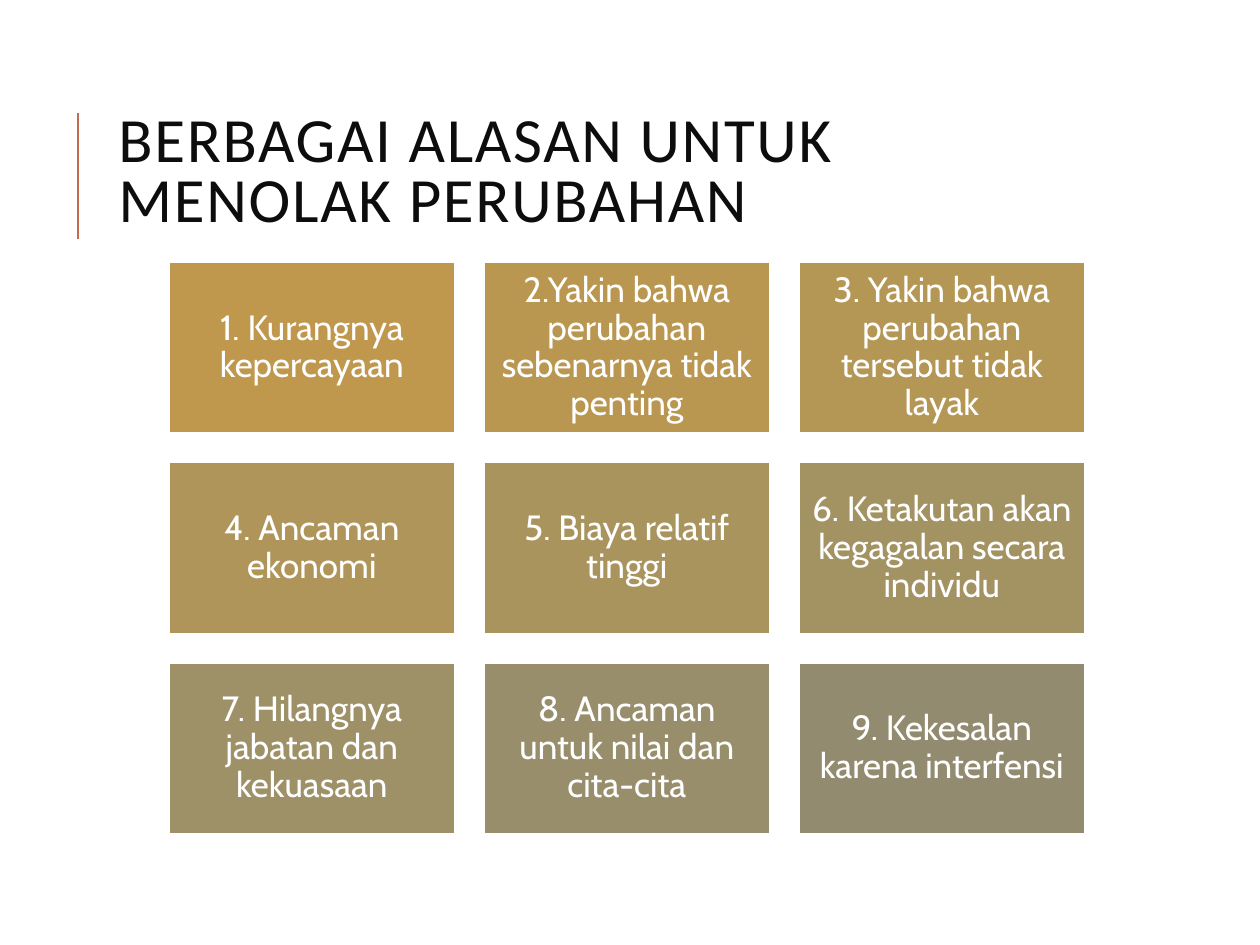
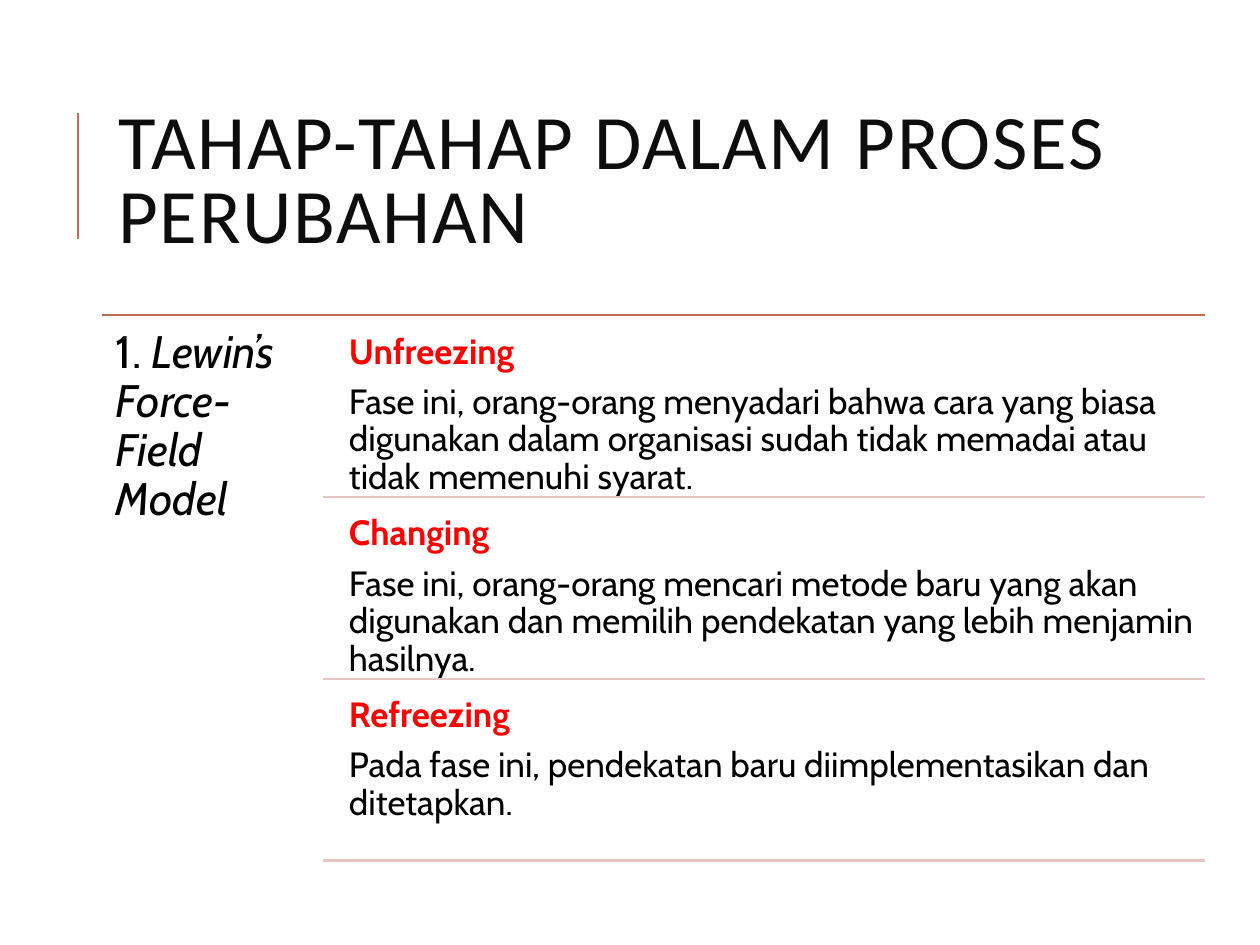
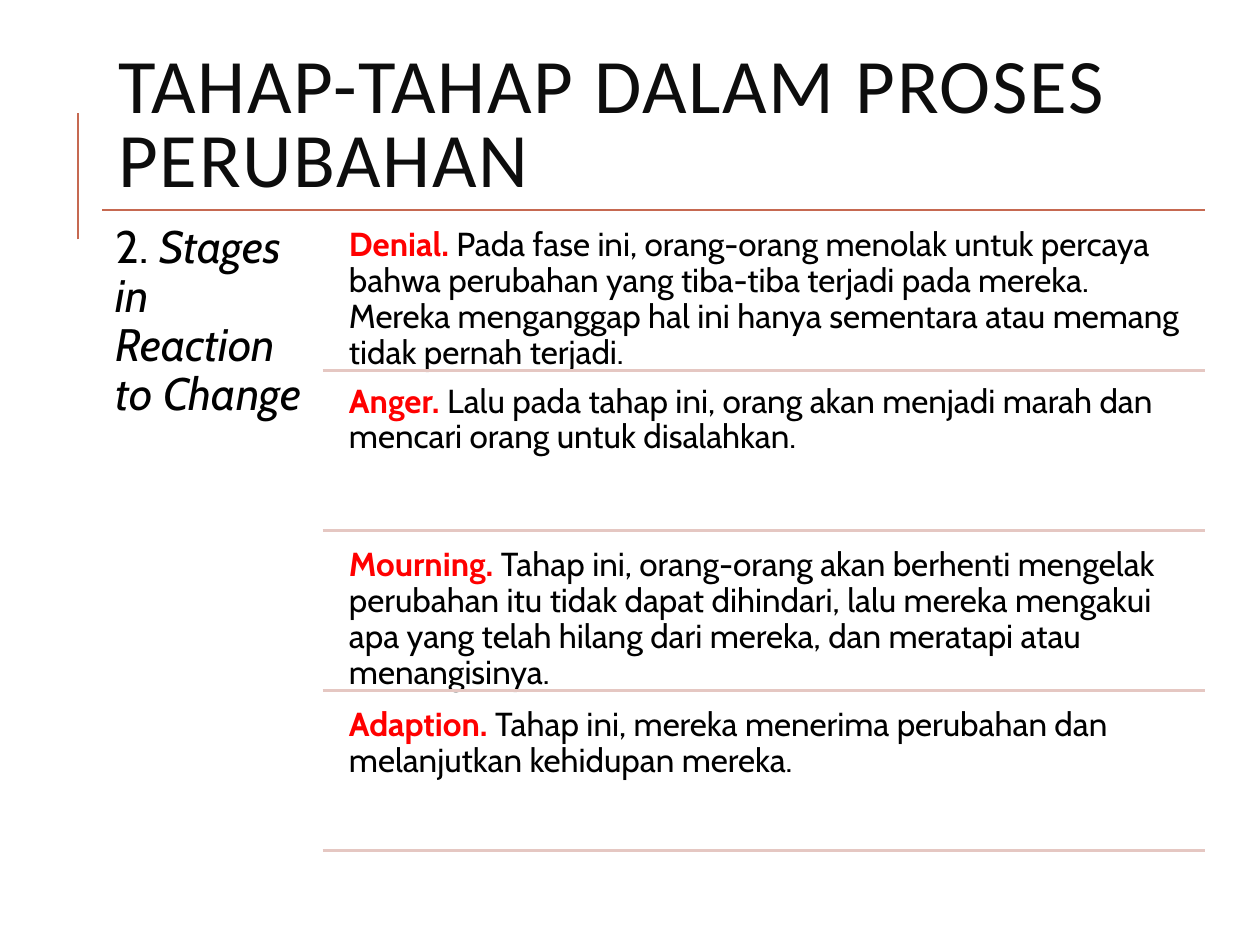
"""Build three slides on resistance to change and the stages of change."""
from lxml import etree
from pptx import Presentation
from pptx.dml.color import RGBColor
from pptx.enum.shapes import MSO_CONNECTOR, MSO_SHAPE
from pptx.enum.text import MSO_ANCHOR, MSO_AUTO_SIZE, PP_ALIGN
from pptx.oxml.ns import qn
from pptx.util import Inches, Pt

STRAIGHT, RECT = MSO_CONNECTOR.STRAIGHT, MSO_SHAPE.RECTANGLE
TOP, MIDDLE = MSO_ANCHOR.TOP, MSO_ANCHOR.MIDDLE
LEFT, CENTER = PP_ALIGN.LEFT, PP_ALIGN.CENTER
NO_FIT = MSO_AUTO_SIZE.NONE

COLORS = {
    "accent": "C66951", "rule": "E5C7C2", "title": "0D0D0D",
    "text": "000000", "key": "FF0000", "white": "FFFFFF",
    "tile1": "BF974D", "tile2": "BA9751", "tile3": "B49655",
    "tile4": "AF955A", "tile5": "A9945E", "tile6": "A39262",
    "tile7": "9E9067", "tile8": "988E6B", "tile9": "928B70",
}
TITLE_FONT, BODY_FONT = "Calibri", "Cabin"

REASONS = [
    "1. Kurangnya kepercayaan",
    "2.Yakin bahwa perubahan sebenarnya tidak penting",
    "3. Yakin bahwa perubahan tersebut tidak layak",
    "4. Ancaman ekonomi",
    "5. Biaya relatif tinggi",
    "6. Ketakutan akan kegagalan secara individu",
    "7. Hilangnya jabatan dan kekuasaan",
    "8. Ancaman untuk nilai dan cita-cita",
    "9. Kekesalan karena interfensi",
]
STAGES_TITLE = "TAHAP-TAHAP DALAM PROSES PERUBAHAN"
LEWIN_STAGES = [
    ("Unfreezing", "Fase ini, orang-orang menyadari bahwa cara yang biasa digunakan dalam "
     "organisasi sudah tidak memadai atau tidak memenuhi syarat."),
    ("Changing", "Fase ini, orang-orang mencari metode baru yang akan digunakan dan memilih "
     "pendekatan yang lebih menjamin hasilnya."),
    ("Refreezing", "Pada fase ini, pendekatan baru diimplementasikan dan ditetapkan."),
]
REACTION_STAGES = [
    ("Denial. ", "Pada fase ini, orang-orang menolak untuk percaya bahwa perubahan yang "
     "tiba-tiba terjadi pada mereka. Mereka menganggap hal ini hanya sementara atau "
     "memang tidak pernah terjadi."),
    ("Anger. ", "Lalu pada tahap ini, orang akan menjadi marah dan mencari orang untuk "
     "disalahkan."),
    ("Mourning. ", "Tahap ini, orang-orang akan berhenti mengelak perubahan itu tidak dapat "
     "dihindari, lalu mereka mengakui apa yang telah hilang dari mereka, dan meratapi atau "
     "menangisinya."),
    ("Adaption. ", "Tahap ini, mereka menerima perubahan dan melanjutkan kehidupan mereka."),
]


def color(name):
    """Return the named colour."""
    return RGBColor.from_string(COLORS[name])


def add_run(p, text, size=20, font=BODY_FONT, fill="text", bold=False, italic=False, spacing=0):
    """Add formatted text to a paragraph."""
    r = p.add_run()
    r.text = text
    r.font.name, r.font.size = font, Pt(size)
    r.font.bold, r.font.italic = bold, italic
    r.font.color.rgb = color(fill)
    if spacing:
        r.font._element.set("spc", str(spacing * 100))


class Deck:
    """Hold the shared style and the current slide."""

    def __init__(self):
        """Open an empty 10 by 7.5 inch presentation."""
        self.prs = Presentation()
        self.prs.slide_width, self.prs.slide_height = Inches(10), Inches(7.5)
        self.s = None

    def slide(self, title, box, size):
        """Start a slide with its title and the accent bar beside it."""
        self.s = self.prs.slides.add_slide(self.prs.slide_layouts[5])
        self.line(0.62, 1.9, 0.62, 0.9, "accent", 1.5)
        sp = self.s.shapes.title
        sp.left, sp.top, sp.width, sp.height = map(Inches, box)
        self.frame(sp.text_frame, MIDDLE)
        p = sp.text_frame.paragraphs[0]
        p.alignment, p.line_spacing = LEFT, 0.8
        add_run(p, title, size=size, font=TITLE_FONT, fill="title", spacing=1)

    def frame(self, tf, anchor, inset=None):
        """Set wrapping, anchor and equal insets of a text frame."""
        tf.word_wrap, tf.auto_size, tf.vertical_anchor = True, NO_FIT, anchor
        if inset is not None:
            tf.margin_left = tf.margin_top = tf.margin_right = tf.margin_bottom = Inches(inset)

    def line(self, x1, y1, x2, y2, fill, width=1.25):
        """Draw a straight line without shadow."""
        c = self.s.shapes.add_connector(STRAIGHT, *map(Inches, (x1, y1, x2, y2)))
        c.line.color.rgb, c.line.width = color(fill), Pt(width)
        etree.SubElement(c._element.spPr, qn("a:effectLst"))

    def paragraphs(self, tf, paragraphs, size, align=LEFT):
        """Fill a text frame with paragraphs, each a list of (text, format) runs."""
        for i, runs in enumerate(paragraphs):
            p = tf.add_paragraph() if i else tf.paragraphs[0]
            p.alignment, p.line_spacing, p.space_after = align, 0.9, Pt(round(size * 0.35, 1))
            for text, style in runs:
                add_run(p, text, size=size, **style)

    def text(self, box, paragraphs, size, inset=0.08):
        """Add a top-anchored text box."""
        tf = self.s.shapes.add_textbox(*map(Inches, box)).text_frame
        self.frame(tf, TOP, inset)
        self.paragraphs(tf, paragraphs, size)

    def tile(self, box, text, fill):
        """Add a filled rectangle with centred white text."""
        sp = self.s.shapes.add_shape(RECT, *map(Inches, box))
        sp.shadow.inherit = False
        sp.fill.solid()
        sp.fill.fore_color.rgb = color(fill)
        sp.line.color.rgb, sp.line.width = color("white"), Pt(1.25)
        self.frame(sp.text_frame, MIDDLE, 0.08)
        self.paragraphs(sp.text_frame, [[(text, {"fill": "white"})]], 20, CENTER)

    def stages(self, top, pitch, number, model, stages, size, split, offsets):
        """List the stages of a model in ruled rows beside its name."""
        self.line(0.81, top, 9.56, top, "accent")
        self.text((0.81, top, 1.75, pitch * len(stages)),
                  [[(number, {}), (model, {"italic": True})]], 26, 0.11)
        for i, ((name, body), offset) in enumerate(zip(stages, offsets)):
            y = top + i * pitch
            key, detail = (name, {"fill": "key", "bold": True}), (body, {})
            self.text((2.69, y + offset, 6.87, pitch - 0.06),
                      [[key], [detail]] if split else [[key, detail]], size)
            self.line(2.56, y + pitch, 9.56, y + pitch, "rule")


def main():
    """Build and save the slides."""
    deck = Deck()

    deck.slide("BERBAGAI ALASAN UNTUK MENOLAK PERUBAHAN", (0.84, 1.02, 7.97, 0.73), 36)
    for i, reason in enumerate(REASONS):
        row, col = divmod(i, 3)
        deck.tile((1.34 + col * 2.5, 2.08 + row * 1.59, 2.27, 1.36), reason, f"tile{i + 1}")

    deck.slide(STAGES_TITLE, (0.84, 0.64, 8.55, 1.64), 44)
    deck.stages(2.5, 4.33 / 3, "1. ", "Lewin’s Force-Field Model", LEWIN_STAGES,
                size=20, split=True, offsets=[0.07] * 3)

    deck.slide(STAGES_TITLE, (0.84, 0.48, 8.72, 1.08), 44)
    deck.stages(1.67, 1.27, "2. ", "Stages in Reaction to Change", REACTION_STAGES,
                size=19, split=False, offsets=[0.06, 0.03, 0.06, 0.06])

    deck.prs.save("out.pptx")


if __name__ == "__main__":
    main()
